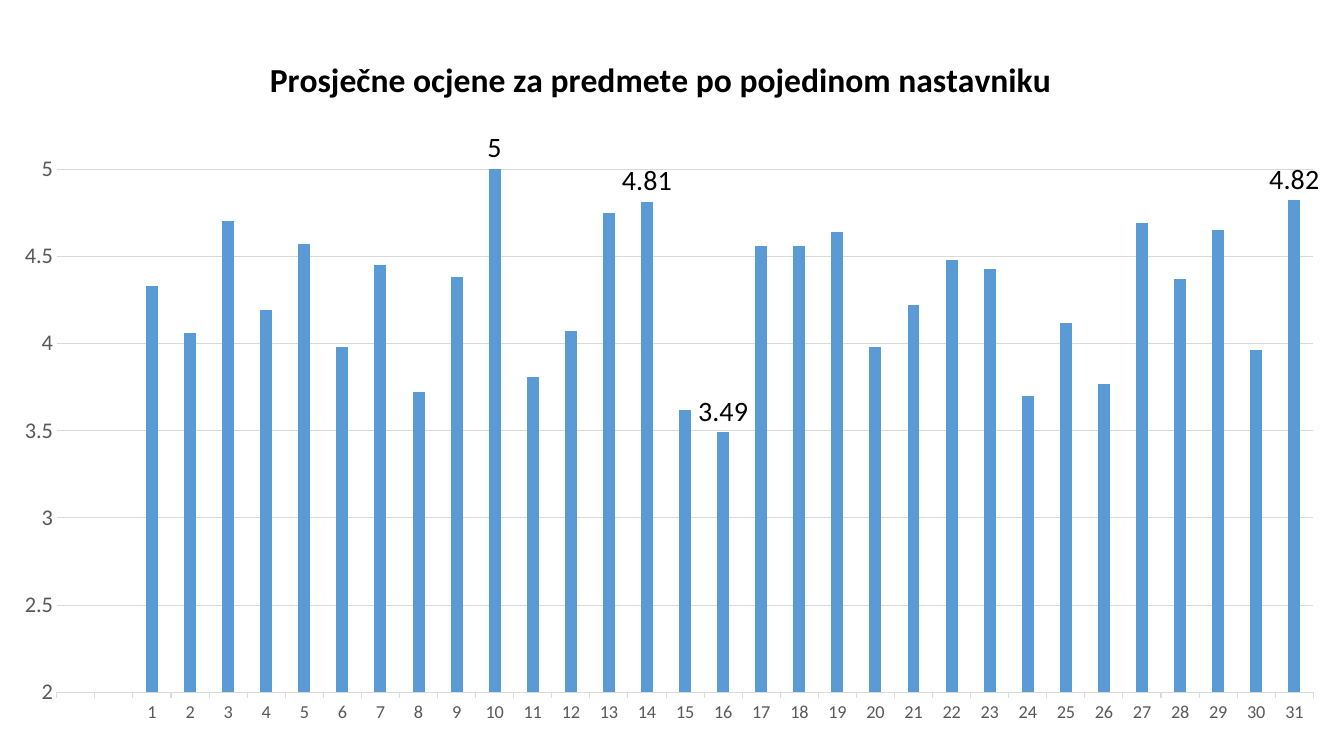
from dataclasses import dataclass

from lxml.etree import SubElement
from pptx import Presentation
from pptx.chart.data import CategoryChartData
from pptx.dml.color import RGBColor
from pptx.enum.chart import XL_CHART_TYPE, XL_LABEL_POSITION, XL_TICK_MARK
from pptx.oxml.ns import qn
from pptx.util import Pt

GRADES = [4.33, 4.06, 4.7, 4.19, 4.57, 3.98, 4.45, 3.72, 4.38, 5, 3.81,
          4.07, 4.75, 4.81, 3.62, 3.49, 4.56, 4.56, 4.64, 3.98, 4.22,
          4.48, 4.43, 3.7, 4.12, 3.77, 4.69, 4.37, 4.65, 3.96, 4.82]
LEADING_GAPS = 2
LABELLED_TEACHERS = (10, 14, 16, 31)


@dataclass(frozen=True)
class Theme:
    font: str = "Calibri"
    text: RGBColor = RGBColor(0x00, 0x00, 0x00)
    axis_text: RGBColor = RGBColor(0x59, 0x59, 0x59)
    rule: RGBColor = RGBColor(0xD9, 0xD9, 0xD9)
    bar: RGBColor = RGBColor(0x5B, 0x9B, 0xD5)
    base_size: int = 10
    title_size: int = 24
    label_size: int = 20
    value_axis_size: int = 16
    category_axis_size: int = 13


def set_layout(parent, index, **settings):
    """Give a chart part a manual layout, as fractions of the chart."""
    layout = parent.find(qn("c:layout"))
    if layout is None:
        layout = SubElement(parent, qn("c:layout"))
        parent.insert(index, layout)
    manual = SubElement(layout, qn("c:manualLayout"))
    for name, value in settings.items():
        SubElement(manual, qn(f"c:{name}")).set("val", str(value))


class SlideBuilder:
    def __init__(self, s, theme):
        self.s = s
        self.theme = theme

    def style_font(self, font, size, color, bold=False):
        font.name = self.theme.font
        font.size = Pt(size)
        font.color.rgb = color
        font.bold = bold

    def style_line(self, line):
        line.color.rgb = self.theme.rule
        line.width = Pt(0.75)

    def column_chart(self, data, x, y, w, h):
        t = self.theme
        chart = self.s.shapes.add_chart(
            XL_CHART_TYPE.COLUMN_CLUSTERED,
            Pt(x), Pt(y), Pt(w), Pt(h), data).chart
        chart.has_legend = False
        self.style_font(chart.font, t.base_size, t.text)
        plot = chart.plots[0]
        plot.vary_by_categories = False
        plot.gap_width = 219
        fill = plot.series[0].format.fill
        fill.solid()
        fill.fore_color.rgb = t.bar
        set_layout(chart.element.find(".//" + qn("c:plotArea")), 0,
                   layoutTarget="inner", xMode="edge", yMode="edge",
                   x=0.046, y=0.195, w=0.935, h=0.729)
        return chart

    def chart_title(self, chart, text):
        title = chart.chart_title
        tf = title.text_frame
        tf.text = text
        self.style_font(tf.paragraphs[0].runs[0].font,
                        self.theme.title_size, self.theme.text, bold=True)
        title.include_in_layout = False
        set_layout(title.element, 1, xMode="edge", yMode="edge",
                   x=0.2, y=0.03)

    def axes(self, chart, low, high, step):
        t = self.theme
        cat, val = chart.category_axis, chart.value_axis
        self.style_font(cat.tick_labels.font, t.category_axis_size, t.axis_text)
        self.style_font(val.tick_labels.font, t.value_axis_size, t.axis_text)
        cat.major_tick_mark = XL_TICK_MARK.OUTSIDE
        val.major_tick_mark = XL_TICK_MARK.NONE
        self.style_line(cat.format.line)
        val.format.line.fill.background()
        val.minimum_scale, val.maximum_scale = low, high
        val.major_unit = step
        val.has_major_gridlines = True
        self.style_line(val.major_gridlines.format.line)

    def point_labels(self, series, indexes):
        series.data_labels.show_value = False
        for i in indexes:
            label = series.points[i].data_label
            self.style_font(label.font, self.theme.label_size, self.theme.text)
            label.position = XL_LABEL_POSITION.OUTSIDE_END


def main():
    prs = Presentation()
    prs.slide_width, prs.slide_height = Pt(960), Pt(540)
    s = prs.slides.add_slide(prs.slide_layouts[6])
    builder = SlideBuilder(s, Theme())

    data = CategoryChartData()
    data.categories = [""] * LEADING_GAPS + [
        str(n) for n in range(1, len(GRADES) + 1)]
    data.add_series("Series 1", [None] * LEADING_GAPS + GRADES)

    chart = builder.column_chart(data, -3.6, 20.9, 960, 512.6)
    builder.chart_title(
        chart, "Prosječne ocjene za predmete po pojedinom nastavniku")
    builder.axes(chart, 2, 5, 0.5)
    builder.point_labels(chart.plots[0].series[0],
                         [n - 1 + LEADING_GAPS for n in LABELLED_TEACHERS])
    prs.save("out.pptx")


if __name__ == "__main__":
    main()
